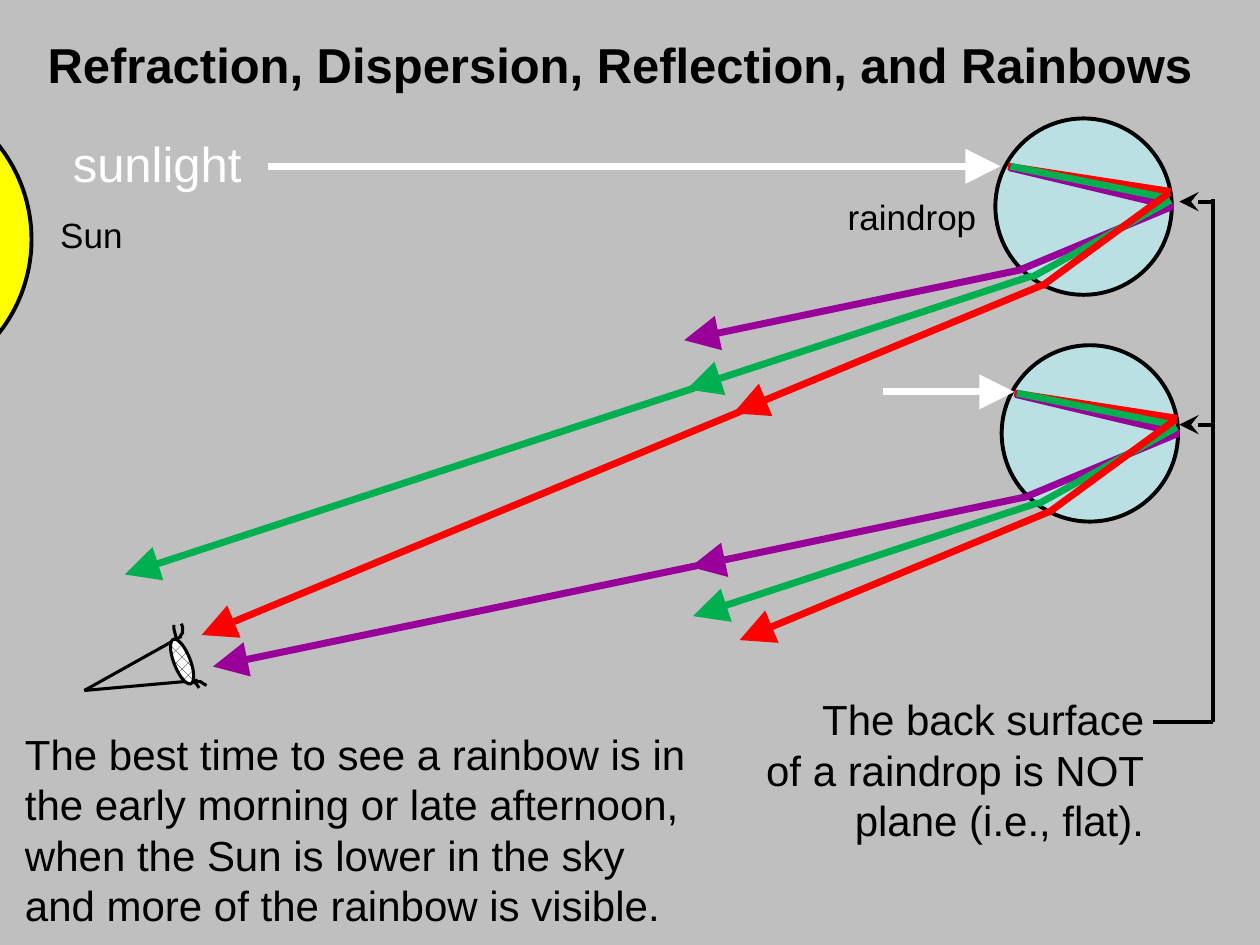
from lxml import etree
from pptx import Presentation
from pptx.dml.color import RGBColor
from pptx.enum.dml import MSO_PATTERN
from pptx.enum.shapes import MSO_CONNECTOR, MSO_SHAPE
from pptx.enum.text import MSO_ANCHOR, MSO_AUTO_SIZE, PP_ALIGN
from pptx.oxml.ns import qn
from pptx.util import Inches, Pt

STRAIGHT = MSO_CONNECTOR.STRAIGHT
OVAL = MSO_SHAPE.OVAL
LEFT, RIGHT = PP_ALIGN.LEFT, PP_ALIGN.RIGHT

GREY = RGBColor(0xBF, 0xBF, 0xBF)
BLACK = RGBColor(0, 0, 0)
WHITE = RGBColor(0xFF, 0xFF, 0xFF)
YELLOW = RGBColor(0xFF, 0xFF, 0)
WATER = RGBColor(0xBB, 0xE0, 0xE3)
RED = RGBColor(0xFF, 0, 0)
GREEN = RGBColor(0, 0xB0, 0x50)
PURPLE = RGBColor(0x99, 0, 0x99)

RAY_WIDTH, OUTLINE_WIDTH, EYE_WIDTH = 4, 2.25, 1.75
DROP_SIZE = 1.4

# Text: lines, (left, top, width, height), size, colour, bold, alignment
TEXTS = [
    (["Refraction, Dispersion, Reflection, and Rainbows"],
     (0.28, 0.22, 9.4, 0.57), 28, BLACK, True, LEFT),
    (["sunlight"], (0.48, 1.01, 1.56, 0.57), 28, WHITE, False, LEFT),
    (["raindrop"], (6.63, 1.5, 1.23, 0.44), 20, BLACK, False, LEFT),
    (["Sun"], (0.38, 1.64, 0.7, 0.44), 20, BLACK, False, LEFT),
    (["The best time to see a rainbow is in",
      "the early morning or late afternoon,",
      "when the Sun is lower in the sky",
      "and more of the rainbow is visible."],
     (0.1, 5.72, 5.54, 1.72), 24, BLACK, False, LEFT),
    (["The back surface", "of a raindrop is NOT", "plane (i.e., flat)."],
     (5.86, 5.45, 3.32, 1.31), 24, BLACK, False, RIGHT),
]

# Raindrops: top-left corner, and where the sunlight starts and ends
DROPS = [
    ((7.9, 0.94), (2.13, 1.32), (7.94, 1.32)),
    ((7.95, 2.74), (7.01, 3.11), (8.05, 3.11)),
]

# Rays of one drop, measured from its corner: colour, start, end, arrowhead
DROP_RAYS = [
    (RED, (0.1, 0.38), (1.39, 0.58), None),
    (PURPLE, (0.11, 0.39), (1.41, 0.7), None),
    (GREEN, (0.12, 0.38), (1.35, 0.63), None),
    (RED, (0.38, 1.32), (-2.08, 2.34), "triangle"),
    (PURPLE, (1.4, 0.7), (0.2, 1.2), None),
    (PURPLE, (0.21, 1.2), (-2.47, 1.76), "triangle"),
    (GREEN, (0.29, 1.25), (-2.45, 2.15), "triangle"),
    (GREEN, (1.39, 0.65), (0.29, 1.26), None),
    (RED, (1.38, 0.59), (0.37, 1.33), None),
]

# Rays carried on towards the eye
LONG_RAYS = [
    (PURPLE, (5.53, 4.49), (1.69, 5.29)),
    (RED, (5.89, 3.26), (1.6, 5.04)),
    (GREEN, (5.51, 3.08), (0.99, 4.56)),
]

# Eye: corner, lids and lashes
EYE_CORNER = (0.67, 5.48)
EYELIDS = [(1.44, 5.05), (1.57, 5.4)]
LASHES = [
    [(1.43, 5.05), (1.45, 5.02), (1.45, 4.98), (1.44, 4.95)],
    [(1.53, 5.4), (1.56, 5.41), (1.59, 5.41), (1.62, 5.43), (1.64, 5.44)],
    [(1.4, 5.07), (1.39, 5.03), (1.38, 4.99), (1.38, 4.96)],
    [(1.54, 5.41), (1.56, 5.43), (1.58, 5.46)],
]

# Pointer to the back surface of the drops
BRACKET_X, BRACKET_TOP, BRACKET_BOTTOM = 9.63, 1.58, 5.73
POINTER_TIP_X, POINTER_ROWS = 9.36, [1.6, 3.37]


def add_line(slide, start, end, color, width, arrowhead=None):
    connector = slide.shapes.add_connector(
        STRAIGHT, *(Inches(value) for value in (*start, *end)))
    connector.line.color.rgb = color
    connector.line.width = Pt(width)
    if arrowhead:
        etree.SubElement(connector.line._get_or_add_ln(), qn("a:tailEnd"),
                         type=arrowhead, w="lg", len="lg")
    etree.SubElement(connector._element.spPr, qn("a:effectLst"))


def add_oval(slide, box, fill, width=OUTLINE_WIDTH):
    oval = slide.shapes.add_shape(OVAL, *(Inches(value) for value in box))
    oval.shadow.inherit = False
    oval.fill.solid()
    oval.fill.fore_color.rgb = fill
    oval.line.color.rgb = BLACK
    oval.line.width = Pt(width)
    return oval


def add_lash(slide, points):
    first, *rest = [(Inches(x), Inches(y)) for x, y in points]
    builder = slide.shapes.build_freeform(*first)
    builder.add_line_segments(rest, close=False)
    lash = builder.convert_to_shape()
    lash.shadow.inherit = False
    lash.fill.background()
    lash.line.color.rgb = BLACK
    lash.line.width = Pt(EYE_WIDTH)


def add_text(slide, lines, box, size, color, bold, alignment):
    text_box = slide.shapes.add_textbox(*(Inches(value) for value in box))
    frame = text_box.text_frame
    frame.word_wrap = False
    frame.auto_size = MSO_AUTO_SIZE.SHAPE_TO_FIT_TEXT
    frame.vertical_anchor = MSO_ANCHOR.MIDDLE
    frame.text = "\n".join(lines)
    for paragraph in frame.paragraphs:
        paragraph.alignment = alignment
        paragraph.font.name = "Arial"
        paragraph.font.size = Pt(size)
        paragraph.font.bold = bold
        paragraph.font.color.rgb = color


def add_drop(slide, corner, light_start, light_end):
    left, top = corner
    add_oval(slide, (left, top, DROP_SIZE, DROP_SIZE), WATER)
    add_line(slide, light_start, light_end, WHITE, RAY_WIDTH, "triangle")
    for color, (x1, y1), (x2, y2), arrowhead in DROP_RAYS:
        add_line(slide, (left + x1, top + y1), (left + x2, top + y2),
                 color, RAY_WIDTH, arrowhead)


def add_eye(slide):
    for lid in EYELIDS:
        add_line(slide, lid, EYE_CORNER, BLACK, EYE_WIDTH)
    lens = add_oval(slide, (1.38, 5.06, 0.13, 0.38), WHITE, EYE_WIDTH)
    lens.rotation = 158.6
    lens.fill.patterned()
    lens.fill.pattern = MSO_PATTERN.PERCENT_30
    lens.fill.fore_color.rgb = BLACK
    lens.fill.back_color.rgb = WHITE
    for points in LASHES:
        add_lash(slide, points)


def main():
    presentation = Presentation()
    presentation.slide_width = Inches(10)
    presentation.slide_height = Inches(7.5)
    slide = presentation.slides.add_slide(presentation.slide_layouts[6])
    slide.background.fill.solid()
    slide.background.fill.fore_color.rgb = GREY

    # Sun, raindrops and rays
    add_oval(slide, (-2.15, 0.7, 2.4, 2.4), YELLOW)
    for drop in DROPS:
        add_drop(slide, *drop)
    for color, start, end in LONG_RAYS:
        add_line(slide, start, end, color, RAY_WIDTH, "triangle")
    add_eye(slide)

    # Bracket from the note to both drops
    bracket_foot = (BRACKET_X, BRACKET_BOTTOM)
    for end in [(BRACKET_X, BRACKET_TOP), (9.15, BRACKET_BOTTOM)]:
        add_line(slide, bracket_foot, end, BLACK, OUTLINE_WIDTH)
    for y in POINTER_ROWS:
        add_line(slide, (BRACKET_X, y), (POINTER_TIP_X, y),
                 BLACK, OUTLINE_WIDTH, "stealth")

    for text in TEXTS:
        add_text(slide, *text)
    presentation.save("out.pptx")


if __name__ == "__main__":
    main()
